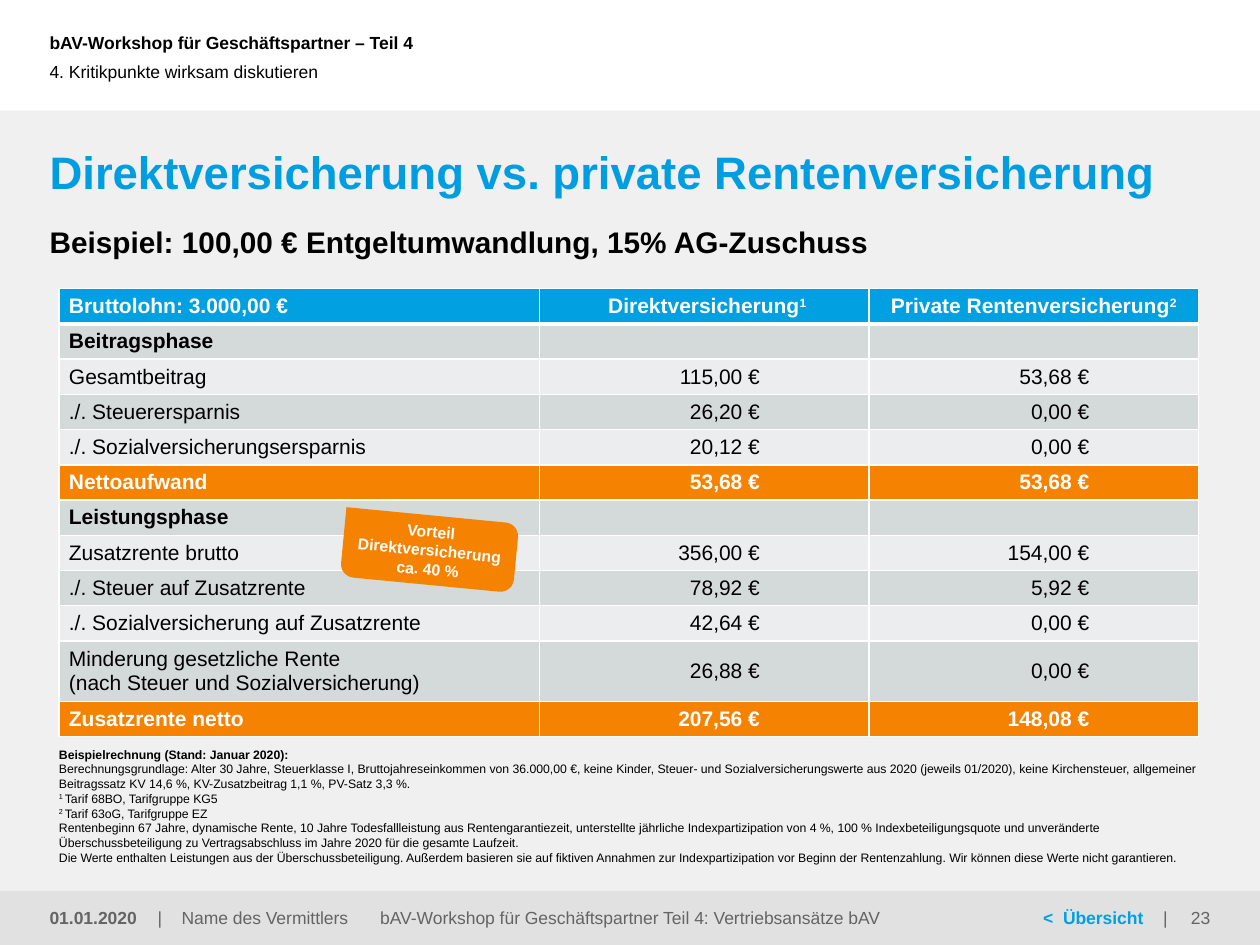
import math
from lxml import etree
from pptx import Presentation
from pptx import util as u
from pptx.dml.color import RGBColor
from pptx.enum import shapes, text
from pptx.oxml import ns

BLUE = RGBColor(0x00, 0xA0, 0xE1)
TITLE_BLUE = RGBColor(0x00, 0x9E, 0xE0)
ORANGE = RGBColor(0xF5, 0x82, 0x00)
BLACK = RGBColor(0x00, 0x00, 0x00)
WHITE = RGBColor(0xFF, 0xFF, 0xFF)
GREY = RGBColor(0x64, 0x64, 0x64)
PANEL = RGBColor(0xF0, 0xF0, 0xF0)
FOOTER = RGBColor(0xE1, 0xE1, 0xE1)
DARK_BAND = RGBColor(0xD4, 0xD9, 0xDA)
LIGHT_BAND = RGBColor(0xEB, 0xED, 0xEE)
LEFT, CENTER, RIGHT = text.PP_ALIGN.LEFT, text.PP_ALIGN.CENTER, text.PP_ALIGN.RIGHT
TOP, MIDDLE = text.MSO_ANCHOR.TOP, text.MSO_ANCHOR.MIDDLE


class SlideBuilder:
    font_name = "Arial"

    def __init__(self, slide):
        self.slide = slide

    def style(self, font, size, color, bold):
        font.name, font.size, font.bold = self.font_name, u.Pt(size), bold
        font.color.rgb = color

    def typeset(self, paragraph, content, size, color, bold=False, align=LEFT, tabs=()):
        paragraph.alignment = align
        if tabs:
            stops = etree.SubElement(paragraph._p.get_or_add_pPr(), ns.qn("a:tabLst"))
            for stop in tabs:
                etree.SubElement(stops, ns.qn("a:tab"), pos=str(u.Cm(stop)), algn="l")
        self.style(paragraph.font, size, color, bold)
        for index, part in enumerate(content.split("^")):
            for line_no, line in enumerate(part.split("\n")):
                if line_no:
                    paragraph.add_line_break()
                if line:
                    run = paragraph.add_run()
                    run.text = line
                    if index % 2:
                        run._r.get_or_add_rPr().set("baseline", "30000")
        if not content:
            etree.SubElement(paragraph._p, ns.qn("a:endParaRPr"), sz=str(size * 100))

    def panel(self, left, top, width, height, color):
        band = self.slide.shapes.add_shape(
            shapes.MSO_SHAPE.RECTANGLE, *map(u.Cm, (left, top, width, height)))
        self.fill(band, color)

    def fill(self, shape, color):
        shape.shadow.inherit = False
        shape.fill.solid()
        shape.fill.fore_color.rgb = color
        shape.line.fill.background()

    def textbox(self, box, paragraphs, size, color, bold=False, align=LEFT,
                anchor=MIDDLE, inset_left=0, inset_right=0, tabs=()):
        frame = self.slide.shapes.add_textbox(*map(u.Cm, box)).text_frame
        frame.word_wrap = True
        frame.vertical_anchor = anchor
        frame.margin_left, frame.margin_right = u.Cm(inset_left), u.Cm(inset_right)
        frame.margin_top = frame.margin_bottom = 0
        for index, content in enumerate(paragraphs):
            paragraph = frame.add_paragraph() if index else frame.paragraphs[0]
            self.typeset(paragraph, content, size, color, bold, align, tabs)
        return frame

    def border(self, cell, bottom):
        properties = cell._tc.get_or_add_tcPr()
        for index, (side, width) in enumerate(
                [("lnL", 1), ("lnR", 1), ("lnT", 1), ("lnB", bottom)]):
            line = etree.Element(ns.qn(f"a:{side}"), w=str(u.Pt(width)))
            solid = etree.SubElement(line, ns.qn("a:solidFill"))
            etree.SubElement(solid, ns.qn("a:srgbClr"), val=str(WHITE))
            properties.insert(index, line)

    def table(self, left, top, widths, row_height, tall_height, rows):
        heights = [tall_height if "\n" in row[0] else row_height for row in rows]
        table = self.slide.shapes.add_table(
            len(rows), len(widths), *map(u.Cm, (left, top, sum(widths), sum(heights)))).table
        table.first_row = table.horz_banding = False
        for column, width in zip(table.columns, widths):
            column.width = u.Cm(width)
        for row_no, (label, *values, kind) in enumerate(rows):
            table.rows[row_no].height = u.Cm(heights[row_no])
            band = DARK_BAND if row_no % 2 else LIGHT_BAND
            if kind == "phase":
                band = DARK_BAND
            elif row_no > 5:
                band = LIGHT_BAND if row_no % 2 else DARK_BAND
            background = {"head": BLUE, "sum": ORANGE}.get(kind, band)
            color = WHITE if kind in ("head", "sum") else BLACK
            for column_no, content in enumerate([label, *values]):
                cell = table.cell(row_no, column_no)
                cell.fill.solid()
                cell.fill.fore_color.rgb = background
                self.border(cell, 3 if row_no == 0 else 1)
                cell.vertical_anchor = MIDDLE
                amount = column_no > 0 and kind != "head"
                cell.margin_left = u.Cm(0.2)
                cell.margin_right = u.Cm(2.2 if amount else 0.2)
                cell.margin_top = cell.margin_bottom = u.Cm(0.1)
                align = LEFT if column_no == 0 else RIGHT if amount else CENTER
                self.typeset(cell.text_frame.paragraphs[0], content, 12, color,
                             kind != "plain", align)

    def badge(self, left, top, width, height, radius, rotation, paragraphs):
        right, bottom = left + width, top + height
        corners = [(right - radius, top + radius, -90),
                   (right - radius, bottom - radius, 0),
                   (left + radius, bottom - radius, 90)]
        outline = [(u.Cm(x + radius * math.cos(math.radians(start + step))),
                    u.Cm(y + radius * math.sin(math.radians(start + step))))
                   for x, y, start in corners for step in range(0, 91, 15)]
        builder = self.slide.shapes.build_freeform(u.Cm(left), u.Cm(top))
        builder.add_line_segments(outline, close=True)
        badge = builder.convert_to_shape()
        self.fill(badge, ORANGE)
        badge.rotation = rotation
        frame = badge.text_frame
        frame.word_wrap = True
        frame.vertical_anchor = MIDDLE
        for index, content in enumerate(paragraphs):
            paragraph = frame.add_paragraph() if index else frame.paragraphs[0]
            self.typeset(paragraph, content, 9, WHITE, True, CENTER)


ROWS = [
    ("Bruttolohn: 3.000,00 €", " Direktversicherung^1", "Private Rentenversicherung^2", "head"),
    ("Beitragsphase", "", "", "phase"),
    ("Gesamtbeitrag", "115,00 €", "53,68 €", "plain"),
    ("./. Steuerersparnis", "26,20 €", "0,00 €", "plain"),
    ("./. Sozialversicherungsersparnis", "20,12 €", "0,00 €", "plain"),
    ("Nettoaufwand", "53,68 €", "53,68 €", "sum"),
    ("Leistungsphase", "", "", "phase"),
    ("Zusatzrente brutto", "356,00 €", "154,00 €", "plain"),
    ("./. Steuer auf Zusatzrente", "78,92 €", "5,92 €", "plain"),
    ("./. Sozialversicherung auf Zusatzrente", "42,64 €", "0,00 €", "plain"),
    ("Minderung gesetzliche Rente \n(nach Steuer und Sozialversicherung)",
     "26,88 €", "0,00 €", "plain"),
    ("Zusatzrente netto", "207,56 €", "148,08 €", "sum"),
]
NOTES = [
    "Beispielrechnung (Stand: Januar 2020):",
    "Berechnungsgrundlage: Alter 30 Jahre, Steuerklasse I, Bruttojahreseinkommen von 36.000,00 €, "
    "keine Kinder, Steuer- und Sozialversicherungswerte aus 2020 (jeweils 01/2020), keine "
    "Kirchensteuer, allgemeiner Beitragssatz KV 14,6 %, KV-Zusatzbeitrag 1,1 %, PV-Satz 3,3 %.",
    "^1 ^Tarif 68BO, Tarifgruppe KG5",
    "^2 ^Tarif 63oG, Tarifgruppe EZ",
    "Rentenbeginn 67 Jahre, dynamische Rente, 10 Jahre Todesfallleistung aus Rentengarantiezeit, "
    "unterstellte jährliche Indexpartizipation von 4 %, 100 % Indexbeteiligungsquote und "
    "unveränderte Überschussbeteiligung zu Vertragsabschluss im Jahre 2020 für die gesamte Laufzeit.",
    "Die Werte enthalten Leistungen aus der Überschussbeteiligung. Außerdem basieren sie auf "
    "fiktiven Annahmen zur Indexpartizipation vor Beginn der Rentenzahlung. Wir können diese "
    "Werte nicht garantieren.",
]


def main():
    deck = Presentation()
    deck.slide_width, deck.slide_height = u.Cm(25.4), u.Cm(19.05)
    page = SlideBuilder(deck.slides.add_slide(deck.slide_layouts[6]))
    foot_top, foot_height = 17.96, 1.09

    page.panel(0, 2.23, 25.4, 16.82, PANEL)
    page.panel(0, foot_top, 25.4, foot_height, FOOTER)
    page.textbox((3.18, foot_top, 6.15, foot_height), ["|\tName des Vermittlers"],
                 10, GREY, tabs=[0.48])
    overview = page.textbox((17.48, foot_top, 6.15, foot_height), ["<\tÜbersicht"],
                            10, BLUE, True, inset_left=3.55, tabs=[0.4, 2.42])
    divider = overview.paragraphs[0].add_run()
    divider.text = "\t|"
    page.style(divider.font, 10, GREY, False)
    page.textbox((0, 0, 17.73, 1.7), ["bAV-Workshop für Geschäftspartner – Teil 4"],
                 10, BLACK, True, inset_left=1)
    page.textbox((0, foot_top, 3.1, foot_height), ["01.01.2020"], 10, GREY, True, inset_left=1)
    page.textbox((23.01, foot_top, 2.39, foot_height), ["23"], 10, GREY,
                 align=RIGHT, inset_right=1)
    page.textbox((1, 2.9, 23.42, 1.4), ["Direktversicherung vs. private Rentenversicherung"],
                 26, TITLE_BLUE, True, anchor=TOP)
    page.textbox((1, 4.52, 23.42, 0.74), ["Beispiel: 100,00 € Entgeltumwandlung, 15% AG-Zuschuss"],
                 17, BLACK, True, anchor=TOP)
    page.textbox((0, 0.64, 18.16, 1.6), ["4. Kritikpunkte wirksam diskutieren"],
                 10, BLACK, inset_left=1)
    notes = page.textbox((1.19, 15.06, 23.32, 2.39), NOTES, 7, BLACK, anchor=TOP)
    notes.paragraphs[0].font.bold = True
    page.table(1.19, 5.82, [9.69, 6.64, 6.64], 0.71, 1.21, ROWS)
    page.textbox((7.24, foot_top, 10.92, foot_height),
                 ["bAV-Workshop für Geschäftspartner Teil 4: Vertriebsansätze bAV"],
                 10, GREY, align=CENTER)
    page.badge(6.91, 10.39, 3.5, 1.4, 0.27, 5.5, ["Vorteil Direktversicherung", "ca. 40 %"])
    deck.save("out.pptx")


if __name__ == "__main__":
    main()
